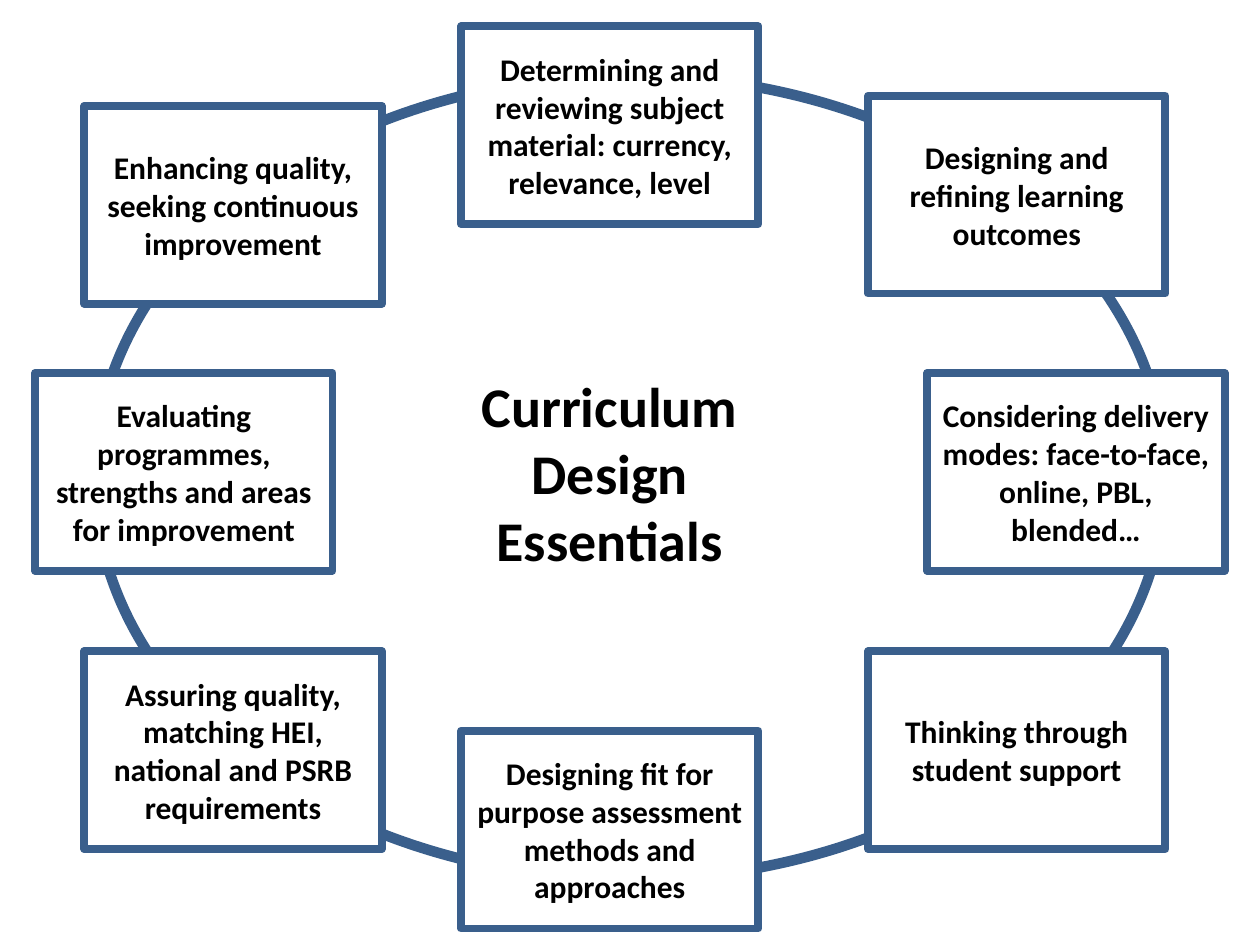
from pptx import Presentation, util as u
from pptx.dml.color import RGBColor
from pptx.enum import shapes, text

COLORS = {"line": "3A5F8C", "paper": "FFFFFF", "ink": "000000"}
FONT = "Calibri"
BOX_W, BOX_H = 2.36, 1.57
MID_X, MID_Y = 3.66, 2.96
LEFT_X, RIGHT_X, LOW_Y = 0.67, 6.89, 5.17

# Clockwise from the top: left, top, wording
STEPS = [
    (MID_X, 0.21, "Determining and reviewing subject material: currency, relevance, level"),
    (RIGHT_X, 0.76, "Designing and refining learning outcomes"),
    (7.36, MID_Y, "Considering delivery modes: face-to-face, online, PBL, blended…"),
    (RIGHT_X, LOW_Y, "Thinking through student support"),
    (MID_X, 5.8, "Designing fit for purpose assessment methods and approaches"),
    (LEFT_X, LOW_Y, "Assuring quality, matching HEI, national and PSRB requirements"),
    (0.28, MID_Y, "Evaluating programmes, strengths and areas for improvement"),
    (LEFT_X, 0.84, "Enhancing quality, seeking continuous improvement"),
]


class CycleSlide:
    def __init__(self, prs):
        self.s = prs.slides.add_slide(prs.slide_layouts[6])

    def shape(self, kind, x, y, w, h, line, weight):
        sp = self.s.shapes.add_shape(kind, *map(u.Inches, (x, y, w, h)))
        sp.shadow.inherit = False
        sp.fill.solid()
        sp.fill.fore_color.rgb = RGBColor.from_string(COLORS["paper"])
        sp.line.color.rgb = RGBColor.from_string(COLORS[line])
        sp.line.width = u.Pt(weight)
        return sp

    def ring(self, x, y, w, h):
        self.shape(shapes.MSO_SHAPE.OVAL, x, y, w, h, "line", 6)

    def box(self, x, y, wording, size=18, line="line"):
        sp = self.shape(shapes.MSO_SHAPE.RECTANGLE, x, y, BOX_W, BOX_H, line, 4.5)
        tf = sp.text_frame
        tf.text = wording
        tf.word_wrap = True
        tf.vertical_anchor = text.MSO_ANCHOR.MIDDLE
        for p in tf.paragraphs:
            p.alignment = text.PP_ALIGN.CENTER
            for r in p.runs:
                r.font.name = FONT
                r.font.size = u.Pt(size)
                r.font.bold = True
                r.font.color.rgb = RGBColor.from_string(COLORS["ink"])


def main():
    prs = Presentation()
    prs.slide_width, prs.slide_height = u.Inches(10), u.Inches(7.5)
    cycle = CycleSlide(prs)
    cycle.ring(0.75, 0.6, 8.5, 6.38)
    for x, y, wording in STEPS:
        cycle.box(x, y, wording)
    cycle.box(MID_X, MID_Y, "Curriculum\nDesign\nEssentials", size=32, line="paper")
    prs.save("out.pptx")


if __name__ == "__main__":
    main()
